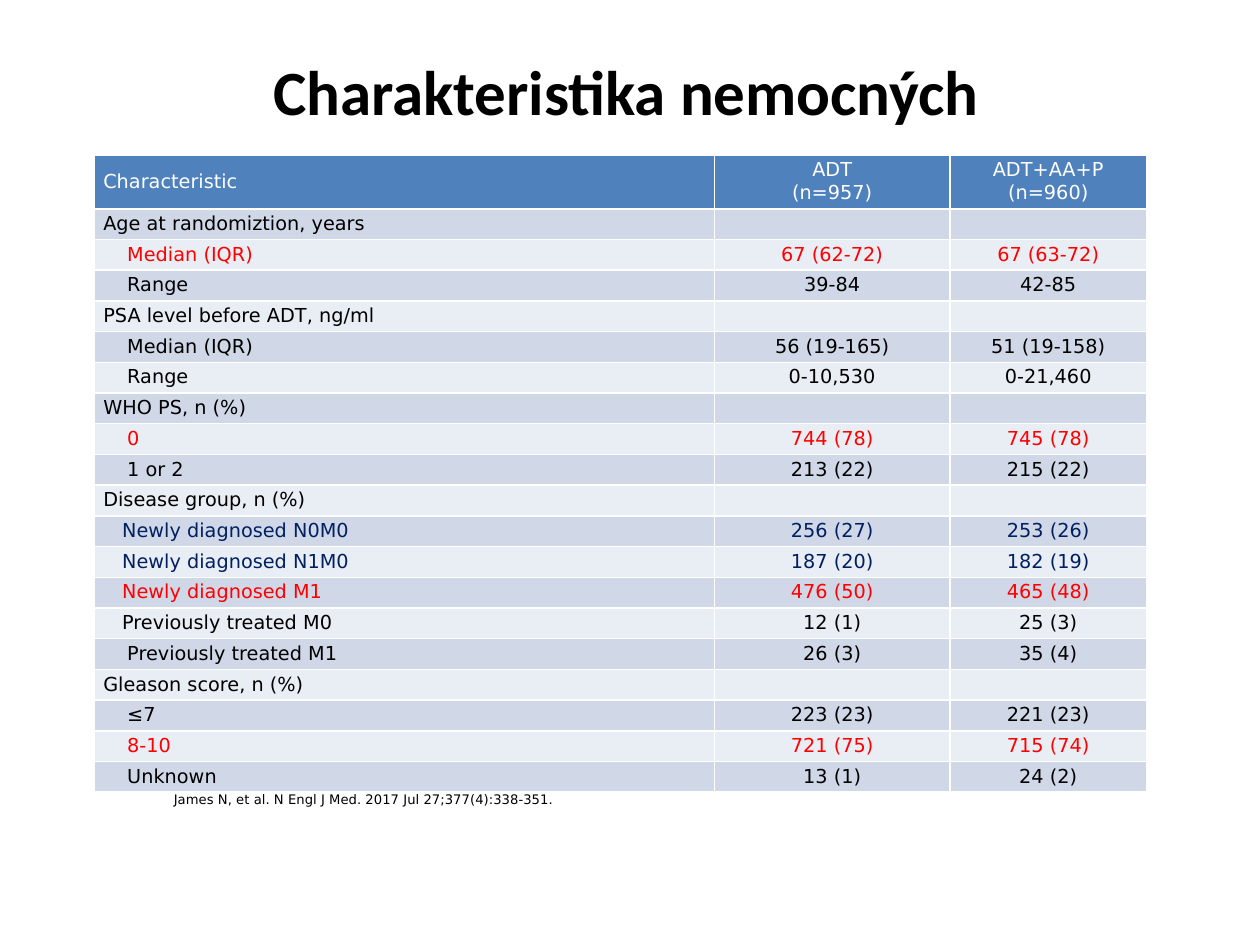
from dataclasses import dataclass

from lxml import etree
from pptx import Presentation
from pptx.dml.color import RGBColor as RGB
from pptx.enum.text import MSO_ANCHOR as Anchor, PP_ALIGN as Align
from pptx.oxml.ns import qn
from pptx.util import Inches, Pt


@dataclass(frozen=True)
class Theme:
    heading: str = "Calibri"
    body: str = "DejaVu Sans"
    title_size: float = 36
    table_size: float = 11
    note_size: float = 7.5
    black: str = "000000"
    white: str = "FFFFFF"
    red: str = "FF0000"
    navy: str = "002060"
    header: str = "4F81BD"
    bands: tuple = ("D0D8E8", "E9EDF4")


T = Theme()
COL_WIDTHS = (4.92, 1.87, 1.56)
HEADER_HEIGHT = 0.42
SHALLOW, DEEP = 0.15, 0.19  # indents of the row labels

HEADER = ("Characteristic", "ADT\n(n=957)", "ADT+AA+P\n(n=960)")
# label, ADT, ADT+AA+P, indent, colour
ROWS = [
    ("Age at randomiztion, years", "", "", 0, T.black),
    ("Median (IQR)", "67 (62-72)", "67 (63-72)", DEEP, T.red),
    ("Range", "39-84", "42-85", DEEP, T.black),
    ("PSA level before ADT, ng/ml", "", "", 0, T.black),
    ("Median (IQR)", "56 (19-165)", "51 (19-158)", DEEP, T.black),
    ("Range", "0-10,530", "0-21,460", DEEP, T.black),
    ("WHO PS, n (%)", "", "", 0, T.black),
    ("0", "744 (78)", "745 (78)", DEEP, T.red),
    ("1 or 2", "213 (22)", "215 (22)", DEEP, T.black),
    ("Disease group, n (%)", "", "", 0, T.black),
    ("Newly diagnosed N0M0", "256 (27)", "253 (26)", SHALLOW, T.navy),
    ("Newly diagnosed N1M0", "187 (20)", "182 (19)", SHALLOW, T.navy),
    ("Newly diagnosed M1", "476 (50)", "465 (48)", SHALLOW, T.red),
    ("Previously treated M0", "12 (1)", "25 (3)", SHALLOW, T.black),
    ("Previously treated M1", "26 (3)", "35 (4)", DEEP, T.black),
    ("Gleason score, n (%)", "", "", 0, T.black),
    ("≤7", "223 (23)", "221 (23)", DEEP, T.black),
    ("8-10", "721 (75)", "715 (74)", DEEP, T.red),
    ("Unknown", "13 (1)", "24 (2)", DEEP, T.black),
]


def write(tf, text, size, font=T.body, color=T.black, bold=False,
          align=Align.LEFT, indent=0):
    """Fill a text frame, one paragraph per line; empty lines keep the size."""
    for i, line in enumerate(text.split("\n")):
        p = tf.add_paragraph() if i else tf.paragraphs[0]
        p.alignment = align
        if indent:
            p._p.get_or_add_pPr().set("marL", str(Inches(indent)))
        if not line:
            etree.SubElement(p._p, qn("a:endParaRPr"), sz=str(int(size * 100)))
            continue
        r = p.add_run()
        r.text = line
        r.font.name, r.font.size, r.font.bold = font, Pt(size), bold
        r.font.color.rgb = RGB.from_string(color)


def set_margins(target, x, y):
    target.margin_left = target.margin_right = Inches(x)
    target.margin_top = target.margin_bottom = Inches(y)


def add_text(s, box, text, anchor, margins, **fmt):
    tf = s.shapes.add_textbox(*map(Inches, box)).text_frame
    tf.word_wrap = True
    tf.vertical_anchor = anchor
    set_margins(tf, *margins)
    write(tf, text, **fmt)


def style_cell(cell, fill):
    """Set the margins, white 1 pt borders and fill of a cell."""
    set_margins(cell, 0.07, 0.03)
    tc_pr = cell._tc.get_or_add_tcPr()
    for side in ("lnL", "lnR", "lnT", "lnB"):
        ln = etree.SubElement(tc_pr, qn(f"a:{side}"), w=str(Pt(1)))
        solid = etree.SubElement(ln, qn("a:solidFill"))
        etree.SubElement(solid, qn("a:srgbClr"), val=T.white)
    cell.fill.solid()
    cell.fill.fore_color.rgb = RGB.from_string(fill)


def add_patient_table(s, box):
    frame = s.shapes.add_table(len(ROWS) + 1, len(COL_WIDTHS), *map(Inches, box))
    table = frame.table
    for column, width in zip(table.columns, COL_WIDTHS):
        column.width = Inches(width)
    row_height = (box[3] - HEADER_HEIGHT) / len(ROWS)
    for i, row in enumerate(table.rows):
        row.height = Inches(row_height if i else HEADER_HEIGHT)
        if i:
            *texts, indent, color = ROWS[i - 1]
            fill = T.bands[(i - 1) % 2]
        else:
            texts, indent, color, fill = HEADER, 0, T.white, T.header
        for j, (cell, text) in enumerate(zip(row.cells, texts)):
            style_cell(cell, fill)
            write(cell.text_frame, text, T.table_size, color=color,
                  align=Align.CENTER if j else Align.LEFT,
                  indent=0 if j else indent)
    table.cell(0, 0).vertical_anchor = Anchor.MIDDLE


def main():
    prs = Presentation()
    prs.slide_width, prs.slide_height = Inches(10), Inches(7.5)
    s = prs.slides.add_slide(prs.slide_layouts[6])
    add_text(s, (1.63, 0.21, 6.68, 1.02), "Charakteristika nemocných",
             Anchor.MIDDLE, (0.1, 0.05), size=T.title_size, font=T.heading,
             bold=True, align=Align.CENTER)
    add_text(s, (1.31, 6.25, 4.74, 0.2),
             "James N, et al. N Engl J Med. 2017 Jul 27;377(4):338-351.",
             Anchor.BOTTOM, (0.07, 0.04), size=T.note_size)
    add_patient_table(s, (0.75, 1.23, 8.35, 5.03))
    prs.save("out.pptx")


if __name__ == "__main__":
    main()
